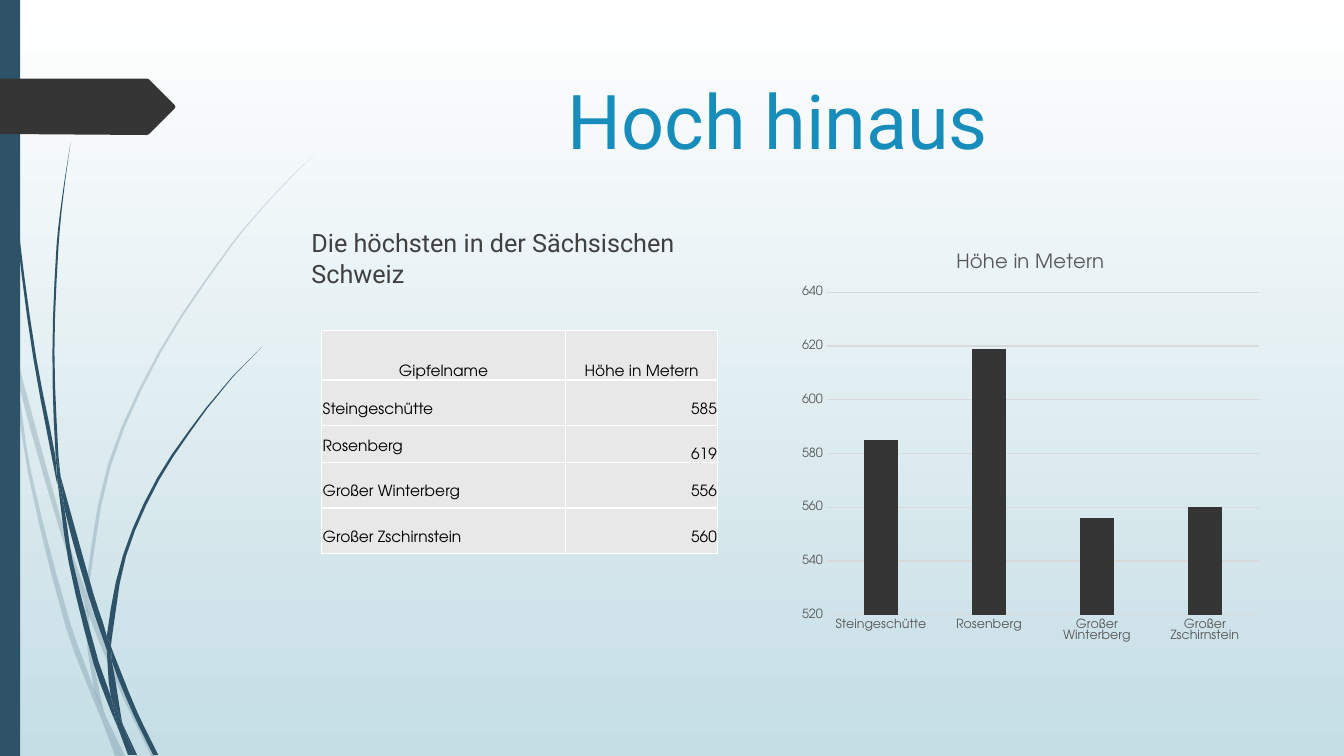
from lxml import etree
from pptx import Presentation
from pptx.chart.data import CategoryChartData
from pptx.dml.color import RGBColor
from pptx.enum.chart import XL_CHART_TYPE as CT, XL_TICK_MARK as TICK
from pptx.enum.shapes import MSO_SHAPE as SHAPE
from pptx.enum.text import MSO_ANCHOR as ANCHOR, PP_ALIGN as ALIGN
from pptx.oxml.ns import qn
from pptx.util import Inches, Pt

C = {"top": "FFFFFF", "bottom": "C5DEE5", "stem": "2E5369", "dark": "353535",
     "title": "178DBB", "body": "404040", "cell": "E8E8E8", "border": "FFFFFF",
     "black": "000000", "axis": "595959", "grid": "D9D9D9"}
HEAD, TEXT = "Roboto", "TeX Gyre Adventor"
MEASURE = "Höhe in Metern"
PEAKS = {"Steingeschütte": 585, "Rosenberg": 619,
         "Großer Winterberg": 556, "Großer Zschirnstein": 560}

# Each piece of grass: its right edge and its left edge, both from top to bottom
PALE_GRASS = [
    ([(0, 2.82), (.09, 3.22), (.11, 3.5)], [(0, 2.99), (.1, 3.44), (.11, 3.5)]),
    ([(.14, 3.45), (.62, 5.2), (.85, 5.86)],
     [(.14, 3.45), (.17, 3.76), (.58, 5.22), (.84, 5.99)]),
    ([(.88, 5.96), (.92, 6.07), (1.27, 6.92), (1.55, 7.5)],
     [(.88, 5.96), (.88, 6.1), (1.23, 6.94), (1.5, 7.5)]),
    ([(1.05, 7.11), (1.24, 7.5)], [(1.05, 7.11), (1.19, 7.5)]),
    ([(.11, 3.5), (.17, 3.76), (.31, 4.69), (.7, 6.19), (.93, 6.83), (1.01, 7.14)],
     [(.11, 3.5), (.28, 4.7), (.65, 6.21), (.92, 6.93), (1.01, 7.14)]),
    ([(.84, 5.99), (.88, 6.08), (.91, 6.46), (1.03, 7.06), (1.05, 7.11)],
     [(.84, 5.99), (.87, 6.46), (.93, 6.83), (.96, 6.92), (1.05, 7.11)]),
    ([(3.12, 1.53), (2.9, 1.75), (2.68, 1.98), (2.29, 2.45), (1.6, 3.49),
      (1.1, 4.62), (.88, 5.84), (.88, 5.96)],
     [(3.12, 1.53), (2.89, 1.75), (2.68, 1.97), (2.28, 2.44), (1.58, 3.48),
      (1.07, 4.61), (.85, 5.84), (.88, 5.96)]),
    ([(1.01, 7.14), (1.19, 7.5)], [(1.01, 7.14), (1.14, 7.5)]),
    ([(.85, 5.86), (.88, 5.96), (.88, 6.1)], [(.85, 5.86), (.84, 5.99), (.88, 6.1)]),
    ([(.93, 6.83), (1.05, 7.11), (1.19, 7.5)],
     [(.93, 6.83), (1.01, 7.14), (1.19, 7.5)]),
]
DARK_GRASS = [
    ([(.04, 0), (.08, 1.09), (.19, 2.32), (.36, 3.55), (.55, 4.53), (.57, 4.81)],
     [(.03, 0), (.07, 1.1), (.17, 2.33), (.33, 3.55), (.56, 4.77), (.57, 4.81)]),
    ([(.6, 4.72), (.93, 5.9), (1.06, 6.31), (1.06, 6.45)],
     [(.6, 4.72), (.64, 5.05), (.88, 5.92), (1.06, 6.45)]),
    ([(1.1, 6.41), (1.13, 6.49), (1.36, 7.06), (1.57, 7.49)],
     [(1.1, 6.41), (1.11, 6.56), (1.32, 7.08), (1.52, 7.49)]),
    ([(.57, 4.77), (.64, 5.05), (.72, 5.56), (.98, 6.57), (1.1, 6.91), (1.17, 7.22)],
     [(.57, 4.77), (.68, 5.57), (.93, 6.59), (1.11, 7.08), (1.17, 7.22)]),
    ([(.7, 1.41), (.63, 1.93), (.58, 2.45), (.54, 3.49), (.58, 4.53), (.6, 4.72)],
     [(.7, 1.41), (.62, 1.93), (.56, 2.45), (.52, 3.49), (.55, 4.49), (.6, 4.72)]),
    ([(1.22, 7.19), (1.36, 7.49)], [(1.22, 7.19), (1.33, 7.49)]),
    ([(.55, 4.49), (.6, 4.72), (.64, 5.05)], [(.55, 4.49), (.57, 4.77), (.64, 5.05)]),
    ([(2.6, 3.44), (2.31, 3.74), (2.05, 4.06), (1.58, 4.76), (1.25, 5.52),
      (1.11, 6.33), (1.1, 6.41)],
     [(2.6, 3.44), (2.31, 3.73), (2.04, 4.05), (1.56, 4.74), (1.22, 5.51),
      (1.06, 6.31), (1.1, 6.41)]),
    ([(1.17, 7.22), (1.31, 7.49)], [(1.17, 7.22), (1.27, 7.49)]),
    ([(1.06, 6.45), (1.11, 6.56), (1.21, 7.16), (1.22, 7.19)],
     [(1.06, 6.45), (1.1, 6.91), (1.22, 7.19)]),
    ([(1.06, 6.31), (1.1, 6.41), (1.11, 6.56)],
     [(1.06, 6.31), (1.06, 6.45), (1.11, 6.56)]),
    ([(1.1, 6.91), (1.22, 7.19), (1.33, 7.49)],
     [(1.1, 6.91), (1.17, 7.22), (1.3, 7.49)]),
]


def rgb(name):
    return RGBColor.from_string(C[name])


def style_font(font, size, color, face=TEXT):
    font.size, font.name, font.bold = Pt(size), face, False
    font.color.rgb = rgb(color)


def write(tf, text, size=11, color="black", face=TEXT, align=ALIGN.LEFT):
    tf.word_wrap = True
    p = tf.paragraphs[0]
    p.alignment = align
    r = p.add_run()
    r.text = text
    style_font(r.font, size, color, face)


def add_text(s, box, text, **fmt):
    write(s.shapes.add_textbox(*map(Inches, box)).text_frame, text, **fmt)


def paint(sp, color, opacity=100):
    sp.shadow.inherit = False
    sp.fill.solid()
    sp.fill.fore_color.rgb = rgb(color)
    sp.line.fill.background()
    if opacity < 100:
        clr = sp.fill._xPr.find(".//" + qn("a:srgbClr"))
        etree.SubElement(clr, qn("a:alpha"), val=str(opacity * 1000))


def add_outline(s, points, color, opacity=100):
    first, *rest = [(Inches(x), Inches(y)) for x, y in points]
    fb = s.shapes.build_freeform(*first)
    fb.add_line_segments(rest)
    paint(fb.convert_to_shape(), color, opacity)


def smooth_edge(points, steps=3):
    """Cubic curve through the points, with x as a function of y."""
    last = len(points) - 1
    slopes = []
    for i in range(last + 1):
        (x0, y0), (x1, y1) = points[max(i - 1, 0)], points[min(i + 1, last)]
        slopes.append((x1 - x0) / (y1 - y0))
    curve = [points[0]]
    for i in range(last):
        (x0, y0), (x1, y1) = points[i:i + 2]
        h = y1 - y0
        # Short spans stay straight
        parts = steps if h > 0.4 else 1
        for k in range(1, parts + 1):
            t = k / parts
            ease = t * t * (3 - 2 * t)
            x = (x0 + (x1 - x0) * ease + h * t * (1 - t)
                 * (slopes[i] * (1 - t) - slopes[i + 1] * t))
            curve.append((x, y0 + h * t))
    return curve


def add_decoration(s, height):
    # Blades of grass
    for pieces, opacity in ((PALE_GRASS, 20), (DARK_GRASS, 100)):
        for right, left in pieces:
            add_outline(s, smooth_edge(right) + smooth_edge(left)[::-1],
                        "stem", opacity)
    # Side bar and arrow tag
    bar = s.shapes.add_shape(SHAPE.RECTANGLE, 0, 0, Inches(0.2), Inches(height))
    paint(bar, "stem")
    add_outline(s, [(0, .78), (1.46, .78), (1.48, .79), (1.73, 1.04), (1.74, 1.06),
                    (1.73, 1.08), (1.48, 1.33), (1.46, 1.34), (0, 1.33)], "dark")


def add_borders(cell):
    tcPr = cell._tc.get_or_add_tcPr()
    for side in ("lnL", "lnR", "lnT", "lnB"):
        ln = etree.SubElement(tcPr, qn("a:" + side), w=str(Pt(1)))
        fill = etree.SubElement(ln, qn("a:solidFill"))
        etree.SubElement(fill, qn("a:srgbClr"), val=C["border"])


def add_peak_table(s, box):
    rows = [("Gipfelname", MEASURE), *PEAKS.items()]
    table = s.shapes.add_table(len(rows), 2, *map(Inches, box)).table
    for col, width in zip(table.columns, (2.42, 1.51)):
        col.width = Inches(width)
    for row, height in zip(table.rows, (0.49, 0.45, 0.37, 0.45, 0.45)):
        row.height = Inches(height)
    for i, row in enumerate(rows):
        for j, value in enumerate(row):
            cell = table.cell(i, j)
            add_borders(cell)
            cell.fill.solid()
            cell.fill.fore_color.rgb = rgb("cell")
            cell.vertical_anchor = ANCHOR.BOTTOM
            tight = i == 0 or value == PEAKS["Rosenberg"]
            cell.margin_left = cell.margin_right = Inches(0.01)
            cell.margin_top = Inches(0.01 if tight else 0.08)
            cell.margin_bottom = Inches(0 if tight else 0.08)
            align = ALIGN.CENTER if i == 0 else (ALIGN.LEFT, ALIGN.RIGHT)[j]
            write(cell.text_frame, str(value), align=align)


def add_peak_chart(s, box):
    data = CategoryChartData()
    data.categories = list(PEAKS)
    data.add_series(MEASURE, list(PEAKS.values()))
    chart = s.shapes.add_chart(CT.COLUMN_CLUSTERED, *map(Inches, box), data).chart
    style_font(chart.font, 10, "black")
    chart.has_legend = False
    chart.has_title = True
    write(chart.chart_title.text_frame, MEASURE, size=14, color="axis",
          align=ALIGN.CENTER)
    # Columns
    plot = chart.plots[0]
    plot.gap_width, plot.vary_by_categories = 219, False
    fill = plot.series[0].format.fill
    fill.solid()
    fill.fore_color.rgb = rgb("dark")
    # Axes
    cat, val = chart.category_axis, chart.value_axis
    for axis in (cat, val):
        axis.major_tick_mark = axis.minor_tick_mark = TICK.NONE
        style_font(axis.tick_labels.font, 9, "axis")
    val.minimum_scale, val.maximum_scale, val.major_unit = 520, 640, 20
    val.format.line.fill.background()
    for line in (cat.format.line, val.major_gridlines.format.line):
        line.color.rgb = rgb("grid")
        line.width = Pt(0.75)


def main():
    prs = Presentation()
    prs.slide_width, prs.slide_height = Inches(13.33), Inches(7.5)
    s = prs.slides.add_slide(prs.slide_layouts[6])
    # Background gradient, top to bottom
    bg = s.background.fill
    bg.gradient()
    bg.gradient_angle = 270
    for stop, name, pos in zip(bg.gradient_stops, ("top", "bottom"), (0, 1)):
        stop.color.rgb, stop.position = rgb(name), pos
    add_decoration(s, 7.5)
    add_text(s, (2.84, 0.68, 9.75, 1.4), "Hoch hinaus", size=54, color="title",
             face=HEAD, align=ALIGN.CENTER)
    add_text(s, (2.99, 2.21, 4.72, 3.62), "Die höchsten in der Sächsischen Schweiz",
             size=18, color="body", face=HEAD)
    add_peak_chart(s, (7.86, 2.32, 4.72, 4.13))
    add_peak_table(s, (3.19, 3.28, 3.93, 2.21))
    prs.save("out.pptx")


if __name__ == "__main__":
    main()
